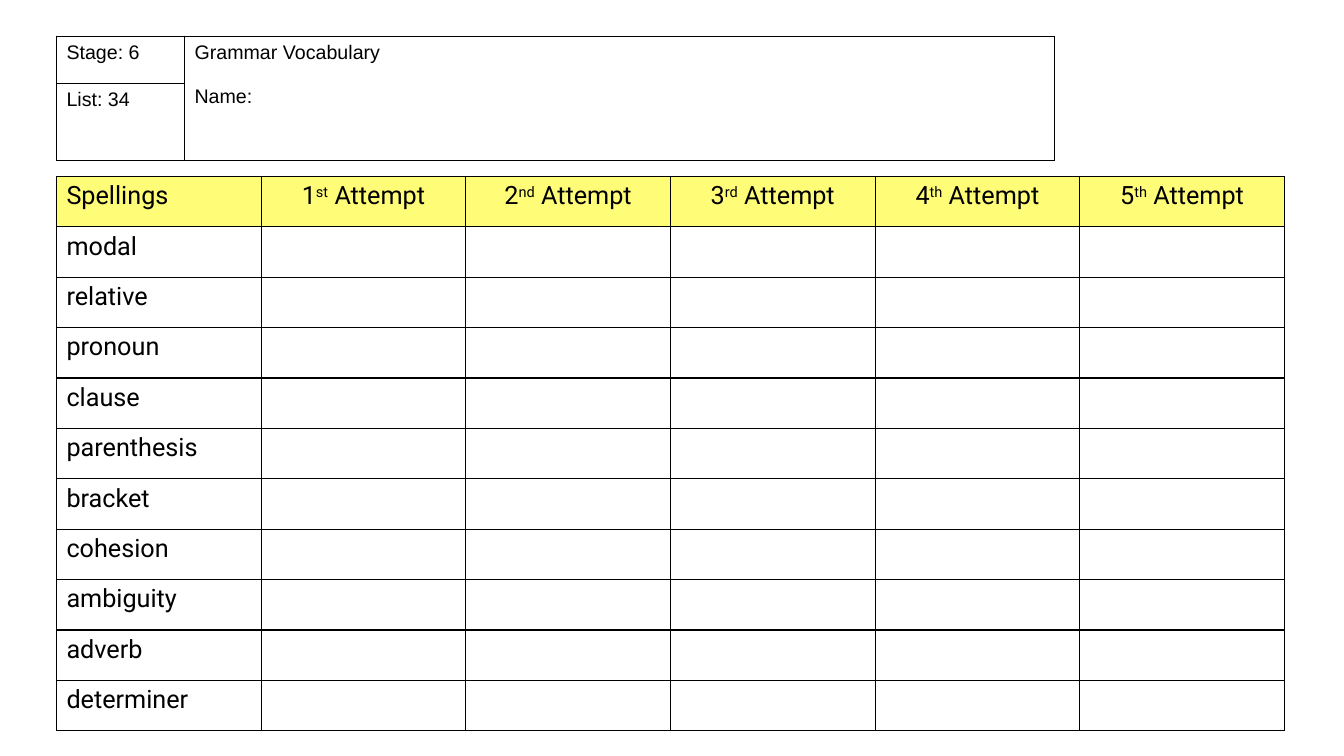
from dataclasses import dataclass
from lxml.etree import SubElement
from pptx import Presentation
from pptx.dml.color import RGBColor
from pptx.enum.text import PP_ALIGN
from pptx.oxml.ns import qn
from pptx.table import Table, _Cell
from pptx.util import Inches, Pt

BLACK = RGBColor(0x00, 0x00, 0x00)
YELLOW = RGBColor(0xFF, 0xFD, 0x78)

WORDS = ["modal", "relative", "pronoun", "clause", "parenthesis", "bracket",
         "cohesion", "ambiguity", "adverb", "determiner"]
ENDINGS = ["st", "nd", "rd", "th", "th"]
LEFT = 0.56


@dataclass
class Grid:
    """Table position, column widths and row heights, in inches."""
    top: float
    cols: list[float]
    rows: list[float]


HEADER = Grid(0.36, [1.27, 8.63], [0.47, 0.75])
SHEET = Grid(1.75, [2.03] * (1 + len(ENDINGS)), [0.5] * (1 + len(WORDS)))


def border(cell: _Cell) -> None:
    """Draw a thin black line on all four sides."""
    props = cell._tc.get_or_add_tcPr()
    for side in ("lnL", "lnR", "lnT", "lnB"):
        line = SubElement(props, qn(f"a:{side}"), w=str(Pt(1)))
        fill = SubElement(line, qn("a:solidFill"))
        SubElement(fill, qn("a:srgbClr"), val=str(BLACK))


def draw(shapes, grid: Grid) -> Table:
    """Add a bordered table without fill or banding."""
    frame = shapes.add_table(
        len(grid.rows), len(grid.cols), Inches(LEFT), Inches(grid.top),
        Inches(sum(grid.cols)), Inches(sum(grid.rows)))
    table = frame.table
    table.first_row = table.horz_banding = False
    for col, width in zip(table.columns, grid.cols):
        col.width = Inches(width)
    for row, height in zip(table.rows, grid.rows):
        row.height = Inches(height)
    for cell in table.iter_cells():
        border(cell)
        cell.fill.background()
    return table


def write(cell: _Cell, *lines: list[str], font: str, size: int,
          align: PP_ALIGN = PP_ALIGN.LEFT, gap: int = 0) -> None:
    """Fill a cell; each line is a list of runs, the second one raised."""
    for i, runs in enumerate(lines):
        para = (cell.text_frame.add_paragraph() if i
                else cell.text_frame.paragraphs[0])
        para.alignment = align
        if i:
            para.space_before = Pt(gap)
        for j, text in enumerate(runs):
            run = para.add_run()
            run.text = text
            run.font.name, run.font.size = font, Pt(size)
            run.font.color.rgb = BLACK
            if j == 1:
                run._r.get_or_add_rPr().set("baseline", "30000")


def main() -> None:
    deck = Presentation()
    deck.slide_width, deck.slide_height = Inches(13.33), Inches(7.5)
    shapes = deck.slides.add_slide(deck.slide_layouts[6]).shapes

    # Spelling sheet: words down the side, attempts across the top
    sheet = draw(shapes, SHEET)
    for row, word in enumerate(["Spellings", *WORDS]):
        write(sheet.cell(row, 0), [word], font="Roboto", size=18)
    for col, ending in enumerate(ENDINGS, 1):
        write(sheet.cell(0, col), [str(col), ending, " Attempt"],
              font="Roboto", size=18, align=PP_ALIGN.CENTER)
    for cell in sheet.rows[0].cells:
        cell.fill.solid()
        cell.fill.fore_color.rgb = YELLOW

    # Header: stage and list beside the topic and name
    head = draw(shapes, HEADER)
    head.cell(0, 1).merge(head.cell(1, 1))
    write(head.cell(0, 0), ["Stage: 6"], font="Arial", size=14)
    write(head.cell(1, 0), ["List: 34"], font="Arial", size=14)
    write(head.cell(0, 1), ["Grammar Vocabulary"], ["Name:"],
          font="Arial", size=14, gap=16)

    deck.save("out.pptx")


if __name__ == "__main__":
    main()
